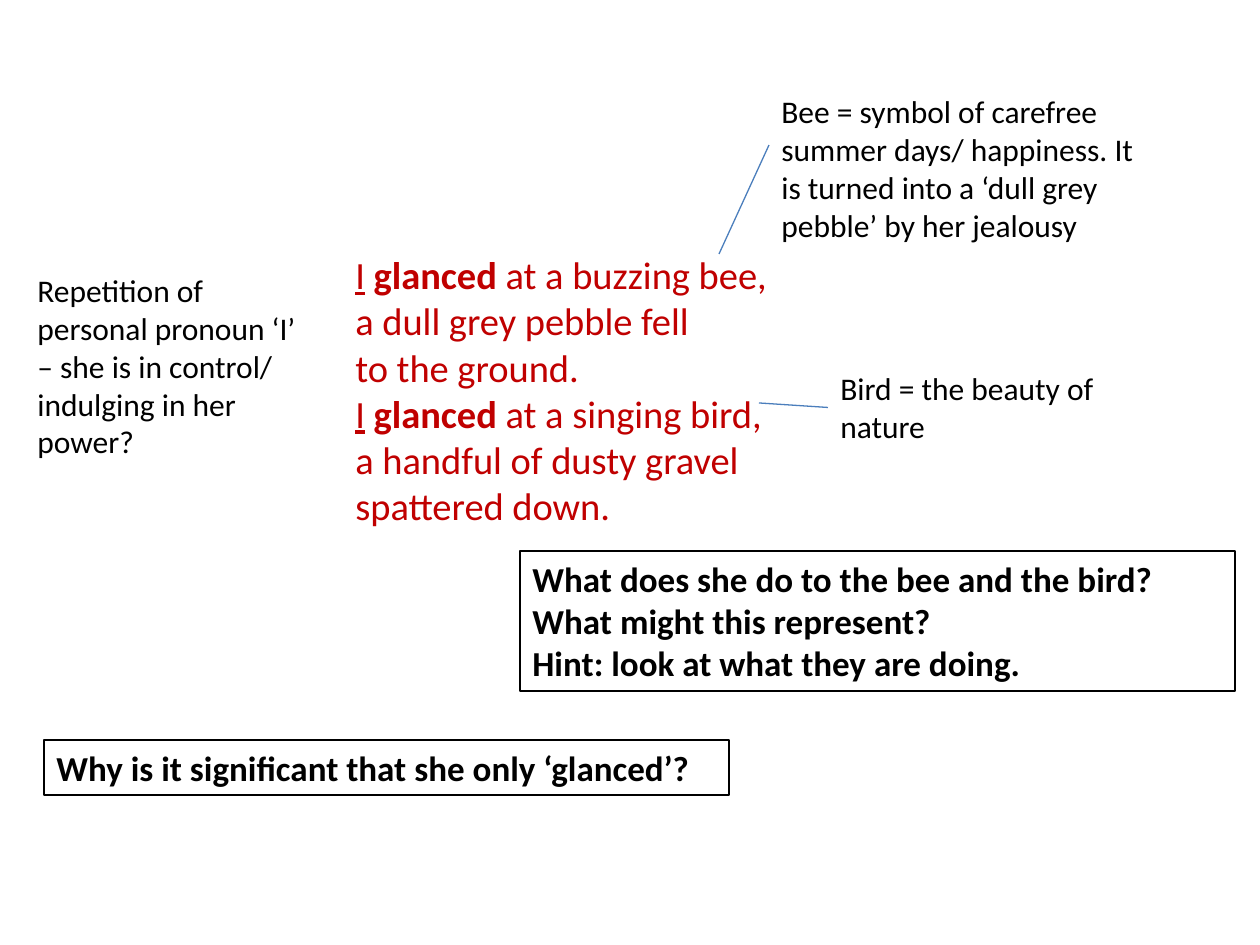
from lxml import etree
from pptx import Presentation
from pptx.dml.color import RGBColor
from pptx.enum.shapes import MSO_CONNECTOR
from pptx.enum.text import MSO_ANCHOR, MSO_AUTO_SIZE, PP_ALIGN
from pptx.oxml.ns import qn
from pptx.util import Pt

STRAIGHT = MSO_CONNECTOR.STRAIGHT
TOP = MSO_ANCHOR.TOP
LEFT = PP_ALIGN.LEFT
GROW = MSO_AUTO_SIZE.SHAPE_TO_FIT_TEXT

PX = 914400 / 126
WIDTH, HEIGHT = 1260, 945
LEFT_SIDE = 1
BLANK_LAYOUT = 6
COLORS = {"poem": "C00000", "text": "000000", "pointer": "4B7EBC"}


def px(value):
    return round(value * PX)


class AnnotatedSlide:
    font = "Calibri"
    line_width = Pt(0.75)

    def __init__(self, presentation):
        self.slide = presentation.slides.add_slide(presentation.slide_layouts[BLANK_LAYOUT])

    def color(self, name):
        return RGBColor.from_string(COLORS[name])

    def text(self, box, paragraphs, size, color="text"):
        shape = self.slide.shapes.add_textbox(*map(px, box))
        frame = shape.text_frame
        frame.word_wrap = True
        frame.auto_size = GROW
        frame.vertical_anchor = TOP
        for index, runs in enumerate(paragraphs):
            paragraph = frame.add_paragraph() if index else frame.paragraphs[0]
            paragraph.alignment = LEFT
            for content, style in runs:
                run = paragraph.add_run()
                run.text = content
                run.font.name = self.font
                run.font.size = Pt(size)
                run.font.color.rgb = self.color(color)
                run.font.bold = style == "bold"
                run.font.underline = style == "underline"
        return shape

    def note(self, box, content):
        return self.text(box, [[(content, "plain")]], 18)

    def question(self, box, lines):
        shape = self.text(box, [[(line, "bold")] for line in lines], 20)
        shape.line.color.rgb = self.color("text")
        shape.line.width = self.line_width
        return shape

    def poem(self, box, verses):
        paragraphs = []
        for glance, *following in verses:
            paragraphs.append([("I", "underline"), (" ", "plain"),
                               ("glanced", "bold"), (glance, "plain")])
            paragraphs += [[(line, "plain")] for line in following]
        return self.text(box, paragraphs, 22, "poem")

    def pointer(self, start, end, target=None):
        connector = self.slide.shapes.add_connector(STRAIGHT, *map(px, start + end))
        connector.line.color.rgb = self.color("pointer")
        connector.line.width = self.line_width
        etree.SubElement(connector._element.spPr, qn("a:effectLst"))
        if target is not None:
            connector.end_connect(target, LEFT_SIDE)
        return connector


def main():
    presentation = Presentation()
    presentation.slide_width, presentation.slide_height = px(WIDTH), px(HEIGHT)
    page = AnnotatedSlide(presentation)

    page.poem((343, 245, 843, 292), [
        (" at a buzzing bee,", "a dull grey pebble fell", "to the ground."),
        (" at a singing bird,", "a handful of dusty gravel", "spattered down."),
    ])
    page.question((44, 740, 685, 55), ["Why is it significant that she only ‘glanced’?"])
    page.note((25, 265, 297, 204),
              "Repetition of personal pronoun ‘I’ – she is in control/ indulging in her power?")
    page.pointer((719, 254), (769, 145))
    page.note((769, 86, 377, 165),
              "Bee = symbol of carefree summer days/ happiness. "
              "It is turned into a ‘dull grey pebble’ by her jealousy")
    page.question((520, 551, 715, 140), [
        "What does she do to the bee and the bird?",
        "What might this represent?",
        "Hint: look at what they are doing.",
    ])
    bird_note = page.note((828, 363, 367, 89), "Bird = the beauty of nature")
    page.pointer((759, 403), (828, 408), bird_note)

    presentation.save("out.pptx")


if __name__ == "__main__":
    main()
